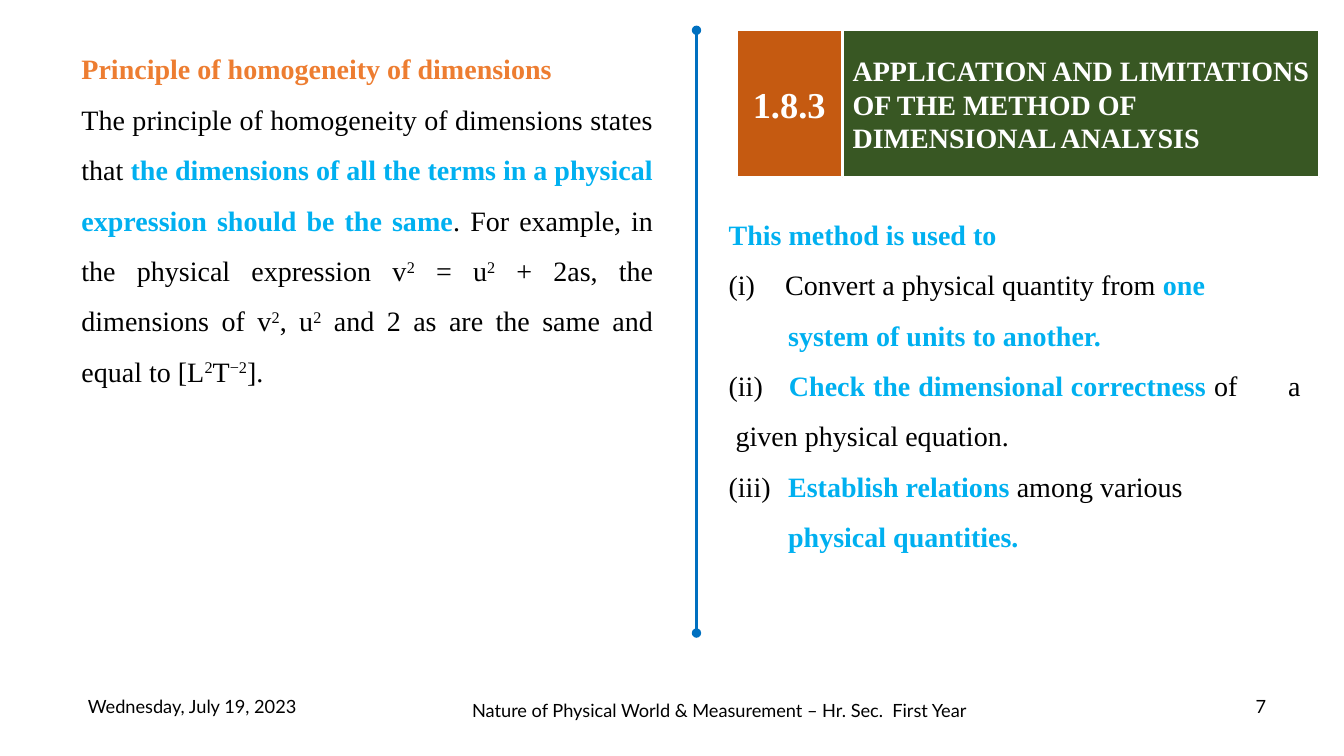
from lxml.etree import SubElement
from pptx import Presentation
from pptx.dml.color import RGBColor
from pptx.enum.shapes import MSO_CONNECTOR as Connector, MSO_SHAPE as Preset
from pptx.enum.text import MSO_ANCHOR as Anchor, MSO_AUTO_SIZE as AutoSize, PP_ALIGN as Align
from pptx.oxml.ns import qn
from pptx.util import Pt

BLACK, WHITE, ORANGE, SKY = "000000", "FFFFFF", "ED7D31", "00B0F0"
BLUE, RUST, GREEN = "0070C0", "C55A11", "385723"
SERIF, SANS = "Times New Roman", "Lato"
KEY = dict(color=SKY, bold=True)
RAISED = dict(baseline=30000)
TOP = 21.6
BODY_WIDTH = 422.6
BANNER_HEIGHT = 105.1


def paint(target, color):
    target.rgb = RGBColor.from_string(color)


def write(paragraph, text, font=SERIF, size=20, color=BLACK, bold=False, baseline=0):
    run = paragraph.add_run()
    run.text = text
    run.font.name = font
    run.font.size = Pt(size)
    run.font.bold = bold
    paint(run.font.color, color)
    if baseline:
        run.font._element.set("baseline", str(baseline))


class SlideBuilder:
    def __init__(self, slide, spacing=1.5, indent=40.3, tab=42.5):
        self.slide = slide
        self.spacing = spacing
        self.indent = indent
        self.tab = tab

    def label(self, left, top, width, height, text):
        box = self.slide.shapes.add_textbox(Pt(left), Pt(top), Pt(width), Pt(height))
        self.fill_frame(box.text_frame, text, Align.CENTER, font=SANS, size=13)

    def banner(self, left, width, fill, text, align, size):
        shape = self.slide.shapes.add_shape(
            Preset.RECTANGLE, Pt(left), Pt(TOP), Pt(width), Pt(BANNER_HEIGHT))
        shape.shadow.inherit = False
        shape.fill.solid()
        paint(shape.fill.fore_color, fill)
        paint(shape.line.color, WHITE)
        shape.line.width = Pt(1.5)
        self.fill_frame(shape.text_frame, text, align, size=size, color=WHITE, bold=True)

    def fill_frame(self, frame, text, align, **style):
        frame.word_wrap = True
        frame.vertical_anchor = Anchor.MIDDLE
        paragraph = frame.paragraphs[0]
        paragraph.alignment = align
        write(paragraph, text, **style)

    def divider(self, x, top, bottom):
        line = self.slide.shapes.add_connector(
            Connector.STRAIGHT, Pt(x), Pt(top), Pt(x), Pt(bottom))
        paint(line.line.color, BLUE)
        line.line.width = Pt(2.25)
        outline = line.line._get_or_add_ln()
        for end in ("a:headEnd", "a:tailEnd"):
            SubElement(outline, qn(end), type="oval")
        SubElement(line._element.spPr, qn("a:effectLst"))

    def body(self, left, top, height, paragraphs):
        box = self.slide.shapes.add_textbox(Pt(left), Pt(top), Pt(BODY_WIDTH), Pt(height))
        frame = box.text_frame
        frame.word_wrap = True
        frame.auto_size = AutoSize.SHAPE_TO_FIT_TEXT
        for index, (numbered, runs) in enumerate(paragraphs):
            paragraph = frame.add_paragraph() if index else frame.paragraphs[0]
            paragraph.alignment = Align.JUSTIFY
            paragraph.line_spacing = self.spacing
            properties = paragraph._p.get_or_add_pPr()
            if numbered:
                properties.set("marL", str(Pt(self.indent)))
                properties.set("indent", str(-Pt(self.indent)))
                SubElement(properties, qn("a:buFont"), typeface=SERIF)
                SubElement(properties, qn("a:buAutoNum"), type="romanLcParenBoth")
            elif any("\t" in text for text, style in runs):
                tabs = SubElement(properties, qn("a:tabLst"))
                SubElement(tabs, qn("a:tab"), pos=str(Pt(self.tab)), algn="l")
            for text, style in runs:
                write(paragraph, text, **style)


PRINCIPLE = [
    (False, [("Principle of homogeneity of dimensions ", dict(color=ORANGE, bold=True))]),
    (False, [
        ("The principle of homogeneity of dimensions states that ", {}),
        ("the dimensions of all the terms in a physical expression should be the same", KEY),
        (". For example, in the physical expression v", {}), ("2", RAISED),
        (" = u", {}), ("2", RAISED),
        (" + 2as, the dimensions of v", {}), ("2", RAISED),
        (", u", {}), ("2", RAISED),
        (" and 2 as are the same and equal to [L", {}), ("2", RAISED),
        ("T", {}), ("−2", RAISED), ("]. ", {}),
    ]),
]

USES = [
    (False, [("This method is used to ", KEY)]),
    (True, [("Convert a physical quantity from ", {}), ("one ", KEY)]),
    (False, [("\tsystem of units to another. ", KEY)]),
    (False, [("(ii) \t", {}), ("Check the dimensional correctness ", KEY),
             ("of \ta  given physical equation. ", {})]),
    (False, [("(iii) \t", {}), ("Establish relations ", KEY), ("among various ", {})]),
    (False, [("\tphysical quantities. ", KEY)]),
]


def main():
    presentation = Presentation()
    presentation.slide_width = Pt(960)
    presentation.slide_height = Pt(540)
    builder = SlideBuilder(presentation.slides.add_slide(presentation.slide_layouts[6]))

    builder.label(51.1, 490.3, 172.1, 28.8, "Wednesday, July 19, 2023")
    builder.label(885.6, 490.3, 30.2, 28.8, "7")
    builder.label(327.6, 493.2, 372.2, 28.8,
                  "Nature of Physical World & Measurement – Hr. Sec.  First Year")
    builder.divider(497.5, TOP, 452.2)
    builder.body(51.1, TOP, 298.1, PRINCIPLE)
    builder.banner(526.3, 74.9, RUST, "1.8.3", Align.CENTER, 26)
    builder.banner(601.9, 340.6, GREEN,
                   "APPLICATION AND LIMITATIONS OF THE METHOD OF DIMENSIONAL ANALYSIS",
                   Align.LEFT, 20)
    builder.body(513.4, 139.7, 262.1, USES)

    presentation.save("out.pptx")


if __name__ == "__main__":
    main()
